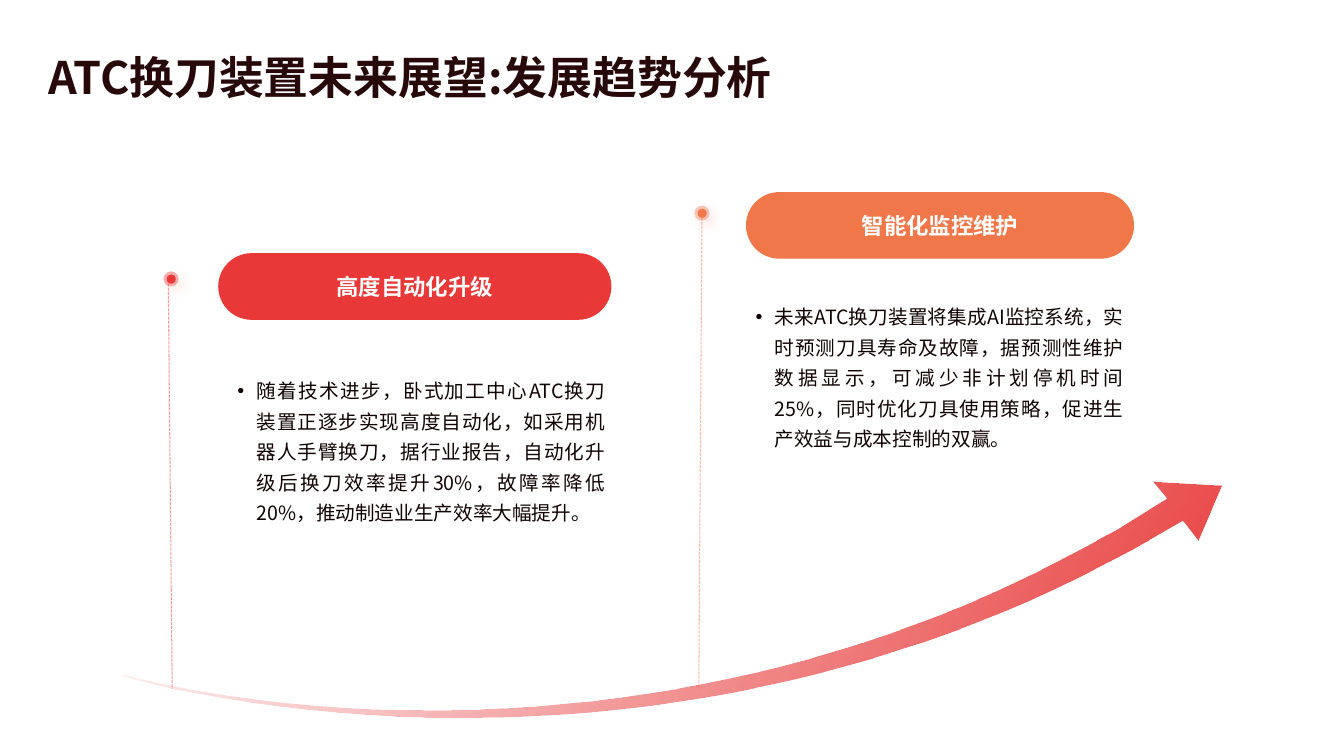
"""Build the slide on development trends of ATC tool changers."""
from math import cos, radians, sin

from lxml.etree import SubElement
from pptx import Presentation
from pptx.dml.color import RGBColor
from pptx.enum.dml import MSO_LINE
from pptx.enum.shapes import MSO_CONNECTOR, MSO_SHAPE
from pptx.enum.text import MSO_ANCHOR, MSO_AUTO_SIZE, PP_ALIGN
from pptx.oxml.ns import qn
from pptx.util import Cm, Pt

FONT = "Noto Sans CJK SC"
COLORS = {
    "red": "E83837",
    "orange": "F07749",
    "glow": "F1463D",
    "title": "280909",
    "body": "110404",
    "white": "FFFFFF",
}


def add_run(paragraph, text, size, color, bold=False):
    run = paragraph.add_run()
    run.text = text
    run.font.size = Pt(size)
    run.font.bold = bold
    run.font.name = FONT
    run.font.color.rgb = RGBColor.from_string(COLORS[color])
    SubElement(run.font._element, qn("a:ea"), typeface=FONT)


def set_opacity(element, percent):
    first_color = next(element.iter(qn("a:srgbClr")))
    SubElement(first_color, qn("a:alpha"), val=str(percent * 1000))


prs = Presentation()
prs.slide_width, prs.slide_height = Cm(33.87), Cm(19.05)
slide = prs.slides.add_slide(prs.slide_layouts[3])
shapes = slide.shapes

heading = shapes.title
heading.left, heading.top, heading.width, heading.height = Cm(0.96), Cm(0.79), Cm(31.93), Cm(2.01)
heading.text_frame.auto_size = MSO_AUTO_SIZE.NONE
heading.text_frame.vertical_anchor = MSO_ANCHOR.MIDDLE
heading_line = heading.text_frame.paragraphs[0]
heading_line.alignment = PP_ALIGN.LEFT
heading_line.line_spacing = 1.2
add_run(heading_line, "ATC换刀装置未来展望:发展趋势分析", 32, "title", True)

trends = [
    {
        "name": "高度自动化升级",
        "detail": "随着技术进步，卧式加工中心ATC换刀装置正逐步实现高度自动化，如采用机器人手臂换刀，"
                  "据行业报告，自动化升级后换刀效率提升30%，故障率降低20%，推动制造业生产效率大幅提升。",
        "color": "red", "glow": "orange",
        "stem": (4.24, 7.04, 4.34, 17.35),
        "dot": (4.12, 6.84),
        "pill": (5.5, 6.38, 9.91, 1.68),
        "body": (5.73, 9.25, 9.78, 7.75),
    },
    {
        "name": "智能化监控维护",
        "detail": "未来ATC换刀装置将集成AI监控系统，实时预测刀具寿命及故障，据预测性维护数据显示，"
                  "可减少非计划停机时间25%，同时优化刀具使用策略，促进生产效益与成本控制的双赢。",
        "color": "orange", "glow": "glow",
        "stem": (17.69, 5.38, 17.61, 17.35),
        "dot": (17.5, 5.18),
        "pill": (18.8, 4.84, 9.78, 1.68),
        "body": (18.79, 7.38, 9.78, 7.37),
    },
]

for index, trend in enumerate(trends, start=1):
    accent = RGBColor.from_string(COLORS[trend["color"]])

    stem = shapes.add_connector(MSO_CONNECTOR.STRAIGHT, *map(Cm, trend["stem"]))
    stem.line.color.rgb = accent
    stem.line.width = Pt(0.75)
    stem.line.dash_style = MSO_LINE.SQUARE_DOT
    set_opacity(stem.line._ln, 50)
    SubElement(stem._element.spPr, qn("a:effectLst"))

    dot_x, dot_y = trend["dot"]
    halo = shapes.add_shape(MSO_SHAPE.OVAL, Cm(dot_x), Cm(dot_y), Cm(0.38), Cm(0.38))
    core = shapes.add_shape(MSO_SHAPE.OVAL, Cm(dot_x + 0.08), Cm(dot_y + 0.08), Cm(0.23), Cm(0.23))
    pill = shapes.add_shape(MSO_SHAPE.ROUNDED_RECTANGLE, *map(Cm, trend["pill"]))
    for part in (halo, core, pill):
        part.fill.solid()
        part.fill.fore_color.rgb = accent
        part.line.fill.background()
        part.shadow.inherit = False
    set_opacity(halo._element.spPr, 40)

    effects = core._element.spPr.find(qn("a:effectLst"))
    glow = SubElement(effects, qn("a:outerShdw"), blurRad=str(Pt(10)), dist=str(Pt(5)),
                      dir="2700000", algn="tl", rotWithShape="0")
    SubElement(glow, qn("a:srgbClr"), val=COLORS[trend["glow"]])
    set_opacity(glow, 40)

    pill.adjustments[0] = 0.5
    pill.text_frame.vertical_anchor = MSO_ANCHOR.MIDDLE
    pill_line = pill.text_frame.paragraphs[0]
    pill_line.alignment = PP_ALIGN.CENTER
    add_run(pill_line, trend["name"], 16, "white", True)

    body = slide.placeholders[index]
    body.left, body.top, body.width, body.height = map(Cm, trend["body"])
    body.text_frame.auto_size = MSO_AUTO_SIZE.NONE
    detail = body.text_frame.paragraphs[0]
    detail.alignment = PP_ALIGN.JUSTIFY
    detail.line_spacing = 1.3
    detail.space_before = detail.space_after = Pt(3)
    bullet_format = detail._p.get_or_add_pPr()
    bullet_format.set("marL", str(Cm(0.48)))
    bullet_format.set("indent", str(-Cm(0.48)))
    SubElement(bullet_format, qn("a:buFont"), typeface="Arial")
    SubElement(bullet_format, qn("a:buChar"), char="•")
    add_run(detail, trend["detail"], 14, "body")

ARROW_TILT = 11.6
ARROW_CENTER = (16.94, 14.67)
arrow_segments = [
    [(29.03, 12.14)],
    [(30.78, 12.24)],
    [(30.18, 13.64)],
    [(29.79, 13.13)],
    [(28.55, 13.84)],
    [(28.07, 14.1), (27.58, 14.35), (27.08, 14.6)],
    [(20.68, 17.73), (12.62, 18.95), (4.85, 17.45)],
    [(4.27, 17.35), (3.66, 17.2), (3.1, 17.04)],
    [(3.1, 16.99)],
    [(3.68, 17.14), (4.27, 17.27), (4.85, 17.37)],
    [(12.57, 18.72), (20.5, 17.35), (26.7, 14.12)],
    [(27.18, 13.87), (27.66, 13.61), (28.12, 13.36)],
    [(29.39, 12.57)],
]
tilt_cos, tilt_sin = cos(radians(ARROW_TILT)), sin(radians(ARROW_TILT))
level_points = []
for segment in arrow_segments:
    for x, y in segment:
        dx, dy = x - ARROW_CENTER[0], y - ARROW_CENTER[1]
        level_points.append((Cm(ARROW_CENTER[0] + dx * tilt_cos + dy * tilt_sin),
                             Cm(ARROW_CENTER[1] - dx * tilt_sin + dy * tilt_cos)))

arrow_builder = shapes.build_freeform(*level_points[0])
arrow_builder.add_line_segments(level_points[1:], close=True)
growth_arrow = arrow_builder.convert_to_shape()
growth_arrow.rotation = ARROW_TILT

steps = iter(list(growth_arrow._element.iter(qn("a:lnTo"))))
for segment in arrow_segments[1:]:
    first, *others = [next(steps) for _ in segment]
    if others:
        first.tag = qn("a:cubicBezTo")
        for other in others:
            first.append(other[0])
            other.getparent().remove(other)

growth_arrow.shadow.inherit = False
growth_arrow.line.fill.background()
growth_arrow.fill.gradient()
growth_arrow.fill.gradient_angle = 340
for stop, position in zip(growth_arrow.fill.gradient_stops, (0, 1)):
    stop.position = position
    stop.color.rgb = RGBColor.from_string(COLORS["red"])
set_opacity(growth_arrow._element.spPr, 0)

prs.save("out.pptx")
